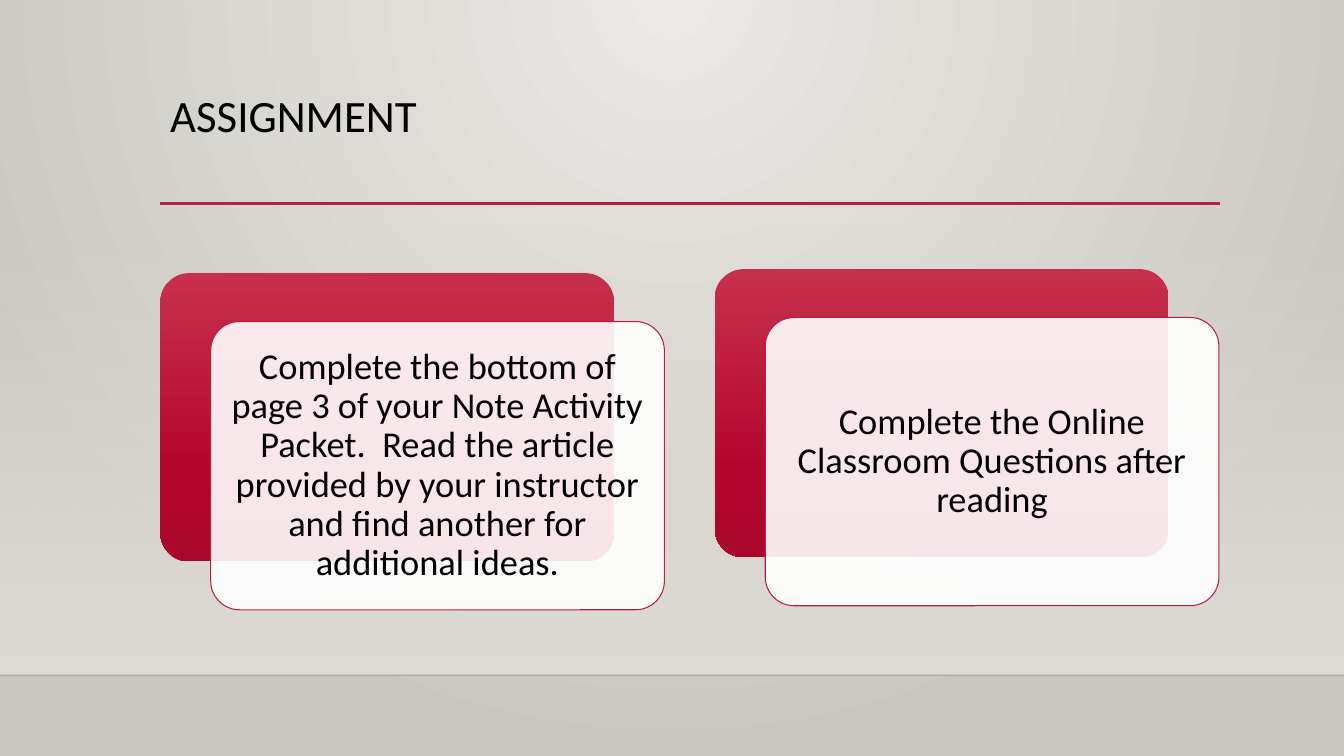
from lxml import etree
from pptx import Presentation
from pptx.dml.color import RGBColor
from pptx.enum import shapes, text
from pptx.oxml.ns import qn
from pptx.util import Inches, Pt

RED = "B71E42"
CARDS = [
    (1.59, 2.71, "Complete the bottom of page 3 of your Note Activity Packet.  "
                 "Read the article provided by your instructor and find another "
                 "for additional ideas."),
    (7.09, 2.67, "Complete the Online Classroom Questions after reading"),
]


def rgb(code):
    """Turn a hex string into a colour."""
    return RGBColor.from_string(code)


def fade(color, part):
    """Set the opacity of a colour element in percent."""
    etree.SubElement(color, qn("a:alpha"), val=str(part * 1000))


def blend(fill, owner, stops, round_=False):
    """Give a fill gradient stops, running down or out from the top centre."""
    fill.gradient()
    grad = owner.find(".//" + qn("a:gradFill"))
    for child in list(grad):
        grad.remove(child)
    row = etree.SubElement(grad, qn("a:gsLst"))
    for place, code, part in stops:
        stop = etree.SubElement(row, qn("a:gs"), pos=str(place * 1000))
        color = etree.SubElement(stop, qn("a:srgbClr"), val=code)
        if part < 100:
            fade(color, part)
    if round_:
        way = etree.SubElement(grad, qn("a:path"), path="circle")
        etree.SubElement(way, qn("a:fillToRect"),
                         l="43000", t="0", r="43000", b="100000")
    else:
        etree.SubElement(grad, qn("a:lin"), ang="5400000", scaled="0")


def block(slide, kind, x, y, w, h):
    """Add a plain shape without outline or shadow."""
    shape = slide.shapes.add_shape(
        kind, Inches(x), Inches(y), Inches(w), Inches(h))
    shape.shadow.inherit = False
    shape.line.fill.background()
    return shape


def rule(slide, x, y, end, code, width, part=100):
    """Draw a level line."""
    line = slide.shapes.add_connector(
        shapes.MSO_CONNECTOR.STRAIGHT,
        Inches(x), Inches(y), Inches(end), Inches(y))
    line.line.color.rgb = rgb(code)
    line.line.width = Pt(width)
    if part < 100:
        fade(line._element.find(".//" + qn("a:srgbClr")), part)
    etree.SubElement(line._element.spPr, qn("a:effectLst"))


def write(frame, words, size, align, anchor):
    """Put one run of black text in a frame."""
    frame.word_wrap = True
    frame.vertical_anchor = anchor
    para = frame.paragraphs[0]
    para.alignment = align
    para.line_spacing = 0.9
    run = para.add_run()
    run.text = words
    run.font.size = Pt(size)
    run.font.name = "Calibri"
    run.font.color.rgb = rgb("000000")


def title(slide, words):
    """Add the heading and the rule below it."""
    rule(slide, 1.59, 2.02, 12.1, RED, 2.5)
    box = slide.shapes.add_textbox(
        Inches(1.59), Inches(0.88), Inches(10.5), Inches(1.15))
    write(box.text_frame, words, 32, text.PP_ALIGN.LEFT, text.MSO_ANCHOR.TOP)


def card(slide, x, y, words):
    """Add a red panel with a white text panel offset over it."""
    kind = shapes.MSO_SHAPE.ROUNDED_RECTANGLE
    back = block(slide, kind, x, y, 4.5, 2.86)
    blend(back.fill, back._element,
          [(0, "C7304C", 100), (69, "B3062F", 100), (100, "AA062C", 100)])
    front = block(slide, kind, x + 0.5, y + 0.48, 4.5, 2.86)
    front.fill.solid()
    front.fill.fore_color.rgb = rgb("FFFFFF")
    fade(front._element.spPr.find(".//" + qn("a:srgbClr")), 90)
    front.line.color.rgb = rgb(RED)
    front.line.width = Pt(0.75)
    for panel in (back, front):
        panel.adjustments[0] = 0.1
    frame = front.text_frame
    frame.margin_left = frame.margin_right = Inches(0.11)
    frame.margin_top = frame.margin_bottom = Inches(0.11)
    write(frame, words, 26, text.PP_ALIGN.CENTER, text.MSO_ANCHOR.MIDDLE)


def scene(slide):
    """Paint the wall and the floor line."""
    blend(slide.background.fill, slide._element,
          [(0, "ECEAE7", 100), (100, "CAC7C1", 100)], True)
    wall = block(slide, shapes.MSO_SHAPE.RECTANGLE, 0, 2.21, 13.33, 4.49)
    blend(wall.fill, wall._element, [(0, "DFDBD5", 0), (100, "DFDBD5", 100)])
    rule(slide, 0, 6.7, 13.33, "000001", 1, 20)


def main():
    """Build and save the slide."""
    deck = Presentation()
    deck.slide_width, deck.slide_height = Inches(13.33), Inches(7.5)
    slide = deck.slides.add_slide(deck.slide_layouts[6])
    scene(slide)
    title(slide, "ASSIGNMENT")
    for x, y, words in CARDS:
        card(slide, x, y, words)
    deck.save("out.pptx")


if __name__ == "__main__":
    main()
